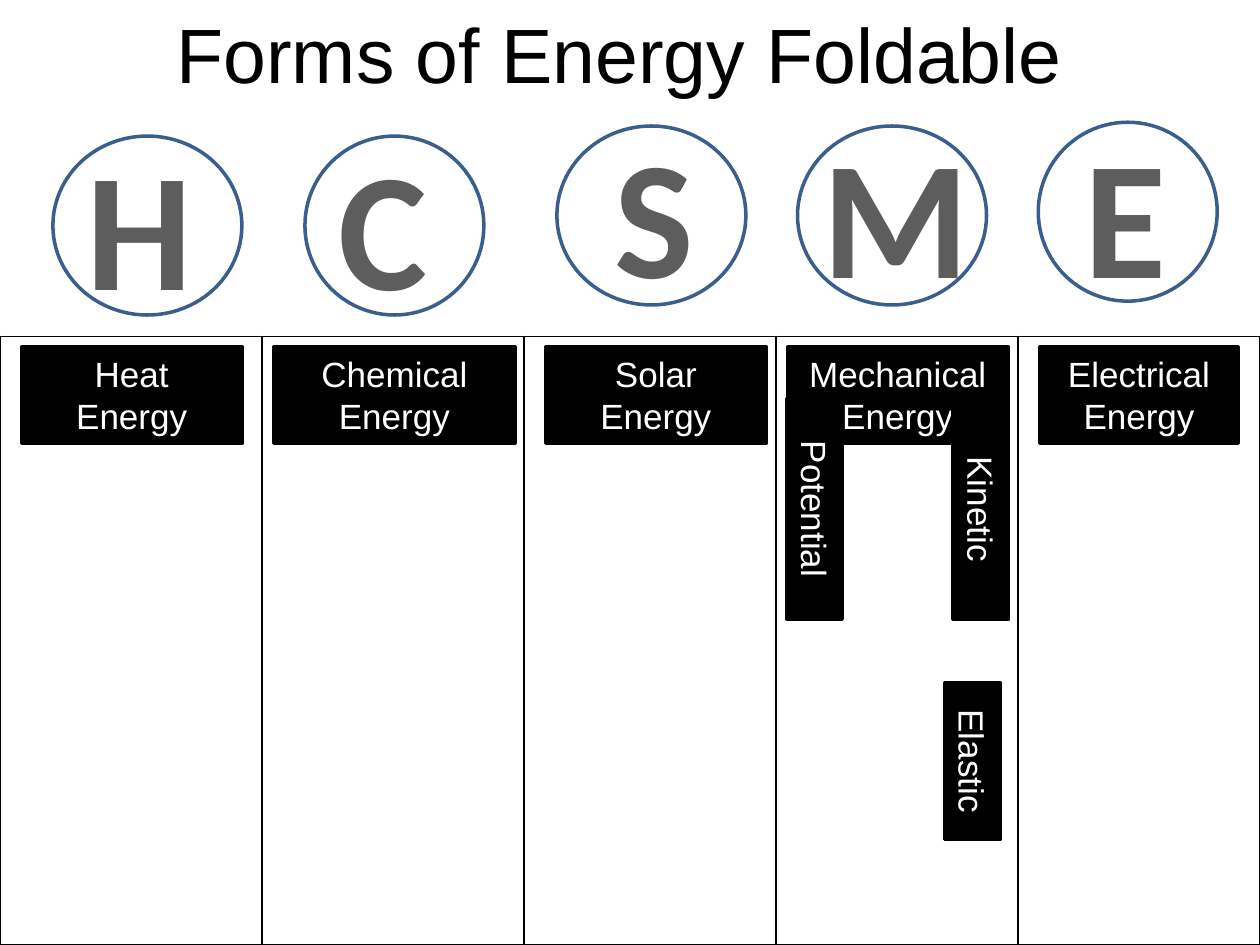
from lxml import etree
from pptx import Presentation
from pptx.dml.color import RGBColor
from pptx.enum.shapes import MSO_SHAPE
from pptx.enum.text import MSO_ANCHOR, PP_ALIGN
from pptx.oxml.ns import qn
from pptx.util import Inches, Pt

BLACK = RGBColor(0x00, 0x00, 0x00)
WHITE = RGBColor(0xFF, 0xFF, 0xFF)
GRAY = RGBColor(0x5D, 0x5D, 0x5D)
BLUE = RGBColor(0x3A, 0x5F, 0x8C)
CENTER = PP_ALIGN.CENTER
TOP, MIDDLE = MSO_ANCHOR.TOP, MSO_ANCHOR.MIDDLE
RECTANGLE, OVAL = MSO_SHAPE.RECTANGLE, MSO_SHAPE.OVAL

COLUMN_WIDTHS = [2.08, 2.08, 2, 1.92, 1.92]
TABLE_TOP, TABLE_HEIGHT = 2.67, 4.83
LETTER_HEIGHT, CIRCLE_HEIGHT = 1.72, 1.42
LABEL_TOP, LABEL_HEIGHT = 2.75, 0.77
TAG_THICKNESS = 0.44

# letter, left, top, width
LETTERS = [
    ("H", 0.58, 0.92, 1.05),
    ("C", 2.58, 0.92, 0.92),
    ("S", 4.77, 0.83, 0.84),
    ("M", 6.42, 0.83, 1.38),
    ("E", 8.5, 0.83, 0.86),
]
# left, top, width
CIRCLES = [
    (0.42, 1.08, 1.5),
    (2.42, 1.08, 1.42),
    (4.42, 1, 1.5),
    (6.33, 1, 1.5),
    (8.24, 0.97, 1.42),
]
# text, left, width
LABELS = [
    ("Heat\nEnergy", 0.17, 1.75),
    ("Chemical Energy", 2.17, 1.92),
    ("Solar\nEnergy", 4.33, 1.75),
    ("Mechanical\nEnergy", 6.25, 1.75),
    ("Electrical\nEnergy", 8.25, 1.58),
]
# text, left, top, length, all before the quarter turn
TAGS = [
    ("Potential", 5.59, 3.82, 1.75),
    ("Kinetic", 6.91, 3.82, 1.75),
    ("Elastic", 7.09, 5.82, 1.25),
]


class FoldablePage:
    """Holds the current slide and the style of its elements."""

    font = "Arial"
    letter_font = "Calibri"
    line_width = Pt(2)
    border_width = Pt(1)

    def __init__(self, page):
        self.page = page

    def set_text(self, shape, text, size, color, font, bold=False, anchor=TOP, wrap=True):
        frame = shape.text_frame
        frame.text = text
        frame.word_wrap = wrap
        frame.vertical_anchor = anchor
        for para in frame.paragraphs:
            para.alignment = CENTER
            for span in para.runs:
                span.font.name = font
                span.font.size = Pt(size)
                span.font.bold = bold
                span.font.color.rgb = color

    def text_box(self, left, top, width, height):
        return self.page.shapes.add_textbox(
            Inches(left), Inches(top), Inches(width), Inches(height))

    def title(self, text):
        box = self.text_box(0.67, 0, 8.5, 0.83)
        self.set_text(box, text, 44, BLACK, self.font, anchor=MIDDLE)

    def letter(self, text, left, top, width):
        box = self.text_box(left, top, width, LETTER_HEIGHT)
        self.set_text(box, text, 96, GRAY, self.letter_font, bold=True, wrap=False)

    def outlined(self, kind, left, top, width, height, color):
        shape = self.page.shapes.add_shape(
            kind, Inches(left), Inches(top), Inches(width), Inches(height))
        shape.shadow.inherit = False
        shape.line.color.rgb = color
        shape.line.width = self.line_width
        return shape

    def circle(self, left, top, width):
        shape = self.outlined(OVAL, left, top, width, CIRCLE_HEIGHT, BLUE)
        shape.fill.background()

    def label(self, text, left, top, width, height, rotation=0):
        shape = self.outlined(RECTANGLE, left, top, width, height, BLACK)
        shape.fill.solid()
        shape.fill.fore_color.rgb = BLACK
        shape.rotation = rotation
        self.set_text(shape, text, 20, WHITE, self.font)

    def table(self, widths, top, height):
        table = self.page.shapes.add_table(
            1, len(widths), 0, Inches(top), Inches(sum(widths)), Inches(height)).table
        table.first_row = table.horz_banding = False
        for column, width in zip(table.columns, widths):
            column.width = Inches(width)
        for cell in table.iter_cells():
            self.add_borders(cell)
            cell.fill.solid()
            cell.fill.fore_color.rgb = WHITE

    def add_borders(self, cell):
        properties = cell._tc.get_or_add_tcPr()
        for side in ("a:lnL", "a:lnR", "a:lnT", "a:lnB"):
            border = etree.SubElement(properties, qn(side), w=str(self.border_width))
            fill = etree.SubElement(border, qn("a:solidFill"))
            etree.SubElement(fill, qn("a:srgbClr"), val=str(BLACK))


def main():
    deck = Presentation()
    deck.slide_width, deck.slide_height = Inches(10), Inches(7.5)
    foldable = FoldablePage(deck.slides.add_slide(deck.slide_layouts[6]))

    foldable.title("Forms of Energy Foldable")
    for letter in LETTERS:
        foldable.letter(*letter)
    for circle in CIRCLES:
        foldable.circle(*circle)
    foldable.table(COLUMN_WIDTHS, TABLE_TOP, TABLE_HEIGHT)
    for text, left, width in LABELS:
        foldable.label(text, left, LABEL_TOP, width, LABEL_HEIGHT)
    for text, left, top, length in TAGS:
        foldable.label(text, left, top, length, TAG_THICKNESS, rotation=90)

    deck.save("out.pptx")


if __name__ == "__main__":
    main()
